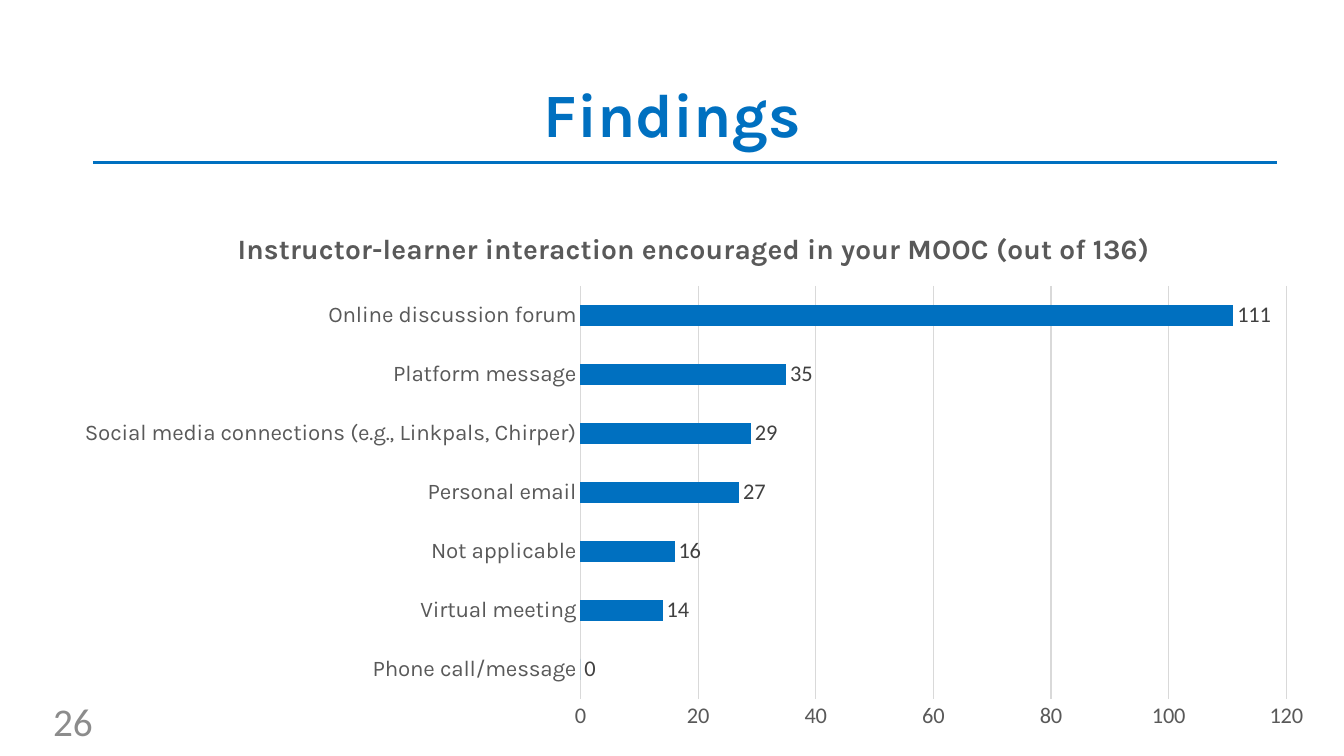
from lxml import etree
from pptx import Presentation
from pptx.chart.data import CategoryChartData
from pptx.dml.color import RGBColor
from pptx.enum.chart import XL_CHART_TYPE, XL_LABEL_POSITION, XL_TICK_MARK
from pptx.enum.shapes import MSO_CONNECTOR
from pptx.enum.text import MSO_ANCHOR, PP_ALIGN
from pptx.oxml.ns import qn
from pptx.util import Cm, Pt

BLUE = RGBColor(0x00, 0x70, 0xC0)
PAGE_GRAY = RGBColor(0x8C, 0x8C, 0x8C)
TEXT_GRAY = RGBColor(0x59, 0x59, 0x59)
LABEL_GRAY = RGBColor(0x40, 0x40, 0x40)
GRID_GRAY = RGBColor(0xD9, 0xD9, 0xD9)
BAR_CLUSTERED = XL_CHART_TYPE.BAR_CLUSTERED
OUTSIDE_END = XL_LABEL_POSITION.OUTSIDE_END
NO_TICK = XL_TICK_MARK.NONE
STRAIGHT = MSO_CONNECTOR.STRAIGHT
MIDDLE = MSO_ANCHOR.MIDDLE
CENTER = PP_ALIGN.CENTER
RIGHT = PP_ALIGN.RIGHT

INTERACTIONS = [
    ("Phone call/message", 0),
    ("Virtual meeting", 14),
    ("Not applicable", 16),
    ("Personal email", 27),
    ("Social media connections (e.g., Linkpals, Chirper)", 29),
    ("Platform message", 35),
    ("Online discussion forum", 111),
]


def set_font(font, name, size, color, bold=False):
    font.name = name
    font.size = Pt(size)
    font.color.rgb = color
    font.bold = bold


def add_text(slide, left, top, width, height, text, alignment):
    frame = slide.shapes.add_textbox(Cm(left), Cm(top), Cm(width), Cm(height)).text_frame
    frame.word_wrap = True
    frame.vertical_anchor = MIDDLE
    paragraph = frame.paragraphs[0]
    paragraph.text = text
    paragraph.alignment = alignment
    return paragraph


presentation = Presentation()
presentation.slide_width = Cm(33.87)
presentation.slide_height = Cm(19.05)
slide = presentation.slides.add_slide(presentation.slide_layouts[6])

heading = add_text(slide, 2.34, 1.12, 29.21, 3.68, "Findings", CENTER)
heading.line_spacing = 0.9
set_font(heading.font, "Karla", 44, BLUE, True)

rule = slide.shapes.add_connector(STRAIGHT, Cm(2.34), Cm(4.09), Cm(32.18), Cm(4.09))
rule.line.color.rgb = BLUE
rule.line.width = Pt(2)
etree.SubElement(rule._element.spPr, qn("a:effectLst"))

page_number = add_text(slide, 0, 17.65, 2.59, 1.02, "26", RIGHT)
set_font(page_number.font, "Calibri", 28, PAGE_GRAY)

chart_data = CategoryChartData(number_format="0")
chart_data.categories = [name for name, count in INTERACTIONS]
chart_data.add_series("Series 1", [count for name, count in INTERACTIONS])
chart = slide.shapes.add_chart(
    BAR_CLUSTERED, Cm(1.5), Cm(5.26), Cm(31.98), Cm(13.41), chart_data
).chart
chart.has_legend = False
chart.font.name = "Calibri"
chart.font.size = Pt(10)

chart.has_title = True
chart_title = chart.chart_title.text_frame.paragraphs[0]
chart_title.text = "Instructor-learner interaction encouraged in your MOOC (out of 136)"
set_font(chart_title.font, "Karla", 20, TEXT_GRAY, True)
chart.chart_title.include_in_layout = False

for axis, font_name in ((chart.category_axis, "Karla"), (chart.value_axis, "Calibri")):
    set_font(axis.tick_labels.font, font_name, 16, TEXT_GRAY)
    axis.major_tick_mark = NO_TICK
    axis.minor_tick_mark = NO_TICK

category_line = chart.category_axis.format.line
category_line.color.rgb = GRID_GRAY
category_line.width = Pt(0.75)

value_axis = chart.value_axis
value_axis.minimum_scale = 0
value_axis.maximum_scale = 120
value_axis.major_unit = 20
value_axis.format.line.fill.background()
value_axis.has_major_gridlines = True
grid_line = value_axis.major_gridlines.format.line
grid_line.color.rgb = GRID_GRAY
grid_line.width = Pt(0.75)

plot = chart.plots[0]
plot.gap_width = 182
plot.vary_by_categories = False
bars = plot.series[0]
bars.format.fill.solid()
bars.format.fill.fore_color.rgb = BLUE
plot.has_data_labels = True
data_labels = plot.data_labels
data_labels.show_value = True
data_labels.position = OUTSIDE_END
data_labels.number_format = "0"
data_labels.number_format_is_linked = False
set_font(data_labels.font, "Calibri", 16, LABEL_GRAY)

presentation.save("out.pptx")
